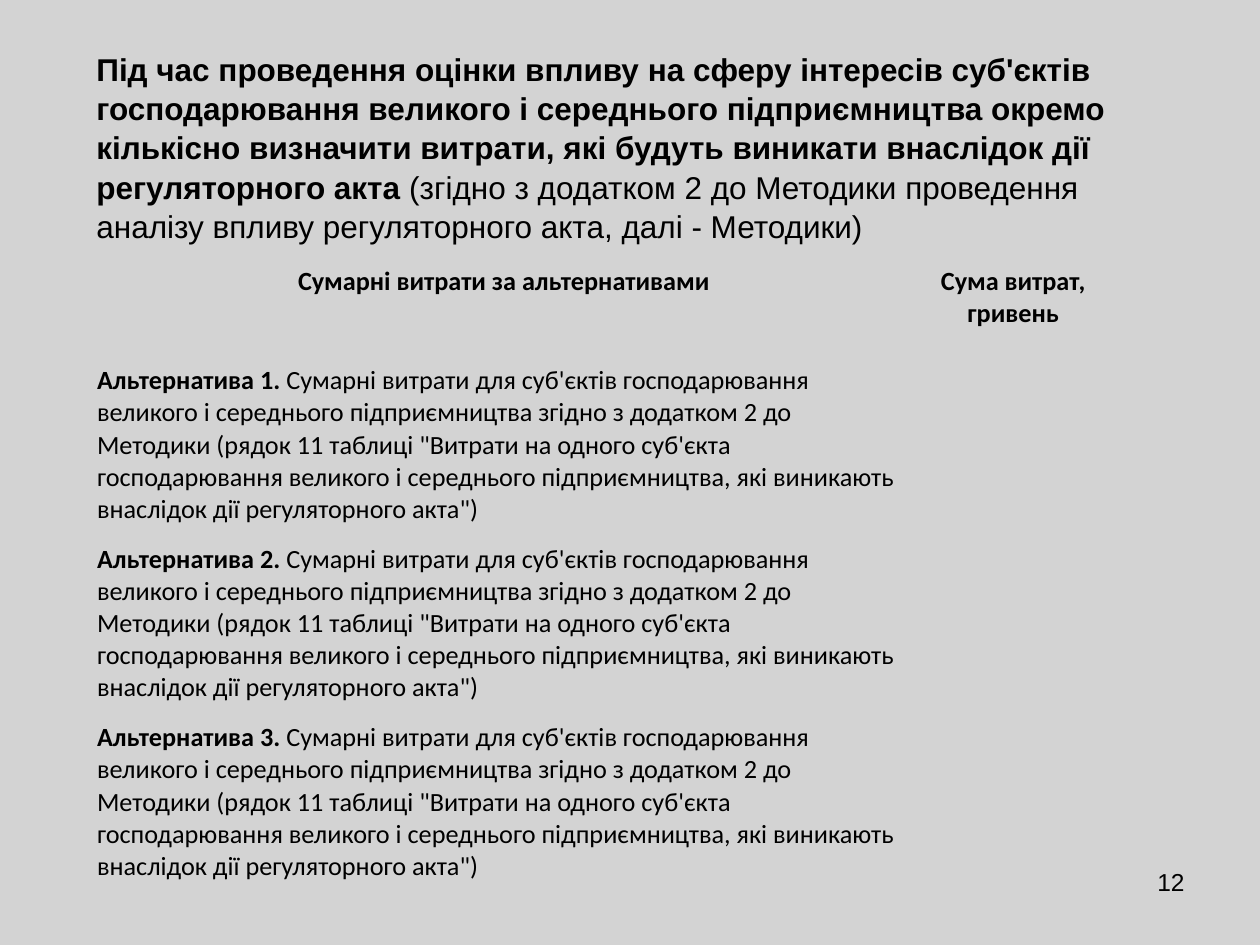
from dataclasses import dataclass

import pptx
import pptx.dml.color
import pptx.enum.text
import pptx.oxml.ns
import pptx.util

Pt = pptx.util.Pt
RGB = pptx.dml.color.RGBColor
ALIGN = pptx.enum.text.PP_ALIGN


@dataclass(frozen=True)
class Theme:
    background: RGB = RGB(0xD3, 0xD3, 0xD3)
    text: RGB = RGB(0, 0, 0)
    heading_font: str = "Arial"
    table_font: str = "Calibri"
    heading_size: int = 18
    table_size: int = 15
    number_size: int = 14
    no_grid_style: str = "{2D5ABB26-0587-4C30-8999-92F81FD0307C}"


THEME = Theme()

HEADING = (
    "Під час проведення оцінки впливу на сферу інтересів суб'єктів "
    "господарювання великого і середнього підприємництва окремо кількісно "
    "визначити витрати, які будуть виникати внаслідок дії регуляторного акта ",
    "(згідно з додатком 2 до Методики проведення аналізу впливу "
    "регуляторного акта, далі - Методики)",
)
TABLE_HEADER = ("Сумарні витрати за альтернативами", "Сума витрат, гривень")
COST_NOTE = (
    "Сумарні витрати для суб'єктів господарювання великого і середнього "
    "підприємництва згідно з додатком 2 до Методики (рядок 11 таблиці "
    "\"Витрати на одного суб'єкта господарювання великого і середнього "
    "підприємництва, які виникають внаслідок дії регуляторного акта\")"
)


def write(p, font, size, bold="", plain="", align=ALIGN.LEFT):
    """Fill a paragraph with a bold part followed by a plain part."""
    p.alignment = align
    for text, is_bold in ((bold, True), (plain, False)):
        if text:
            r = p.add_run()
            r.text = text
            r.font.name, r.font.size, r.font.bold = font, Pt(size), is_bold
            r.font.color.rgb = THEME.text


def add_text_box(s, left, top, width, height):
    tf = s.shapes.add_textbox(Pt(left), Pt(top), Pt(width), Pt(height)).text_frame
    tf.word_wrap = True
    return tf.paragraphs[0]


def add_heading(s, *box):
    p = add_text_box(s, *box)
    p.line_spacing = 1.04
    write(p, THEME.heading_font, THEME.heading_size, *HEADING)


def add_slide_number(s, number, *box):
    p = add_text_box(s, *box)
    write(p, THEME.heading_font, THEME.number_size, plain=str(number), align=ALIGN.RIGHT)


def add_cost_table(s, left, top, width, height):
    """Place the header and three alternatives; the last row takes the rest."""
    header_height, row_height, sum_width = 57, 102, 114
    frame = s.shapes.add_table(4, 2, Pt(left), Pt(top), Pt(width), Pt(height))
    style = next(frame.element.iter(pptx.oxml.ns.qn("a:tableStyleId")))
    style.text = THEME.no_grid_style
    table = frame.table
    table.first_row = table.horz_banding = False

    for column, w in zip(table.columns, (width - sum_width, sum_width)):
        column.width = Pt(w)
    last_height = height - header_height - 2 * row_height
    for row, h in zip(table.rows, (header_height, row_height, row_height, last_height)):
        row.height = Pt(h)
    for cell in table.iter_cells():
        cell.fill.background()
        cell.margin_left = cell.margin_right = Pt(1.5)
        cell.margin_top = cell.margin_bottom = Pt(1.5)

    font = THEME.table_font, THEME.table_size
    for col, title in enumerate(TABLE_HEADER):
        write(table.cell(0, col).text_frame.paragraphs[0], *font, title, align=ALIGN.CENTER)
    for i in range(1, 4):
        write(table.cell(i, 0).text_frame.paragraphs[0], *font, f"Альтернатива {i}. ", COST_NOTE)


def main():
    prs = pptx.Presentation()
    prs.slide_width, prs.slide_height = Pt(720), Pt(540)
    s = prs.slides.add_slide(prs.slide_layouts[6])
    s.background.fill.solid()
    s.background.fill.fore_color.rgb = THEME.background
    add_slide_number(s, 12, 516, 492, 168, 37.5)
    add_heading(s, 48, 24, 636, 116.5)
    add_cost_table(s, 54, 150, 582, 379.5)
    prs.save("out.pptx")


if __name__ == "__main__":
    main()
